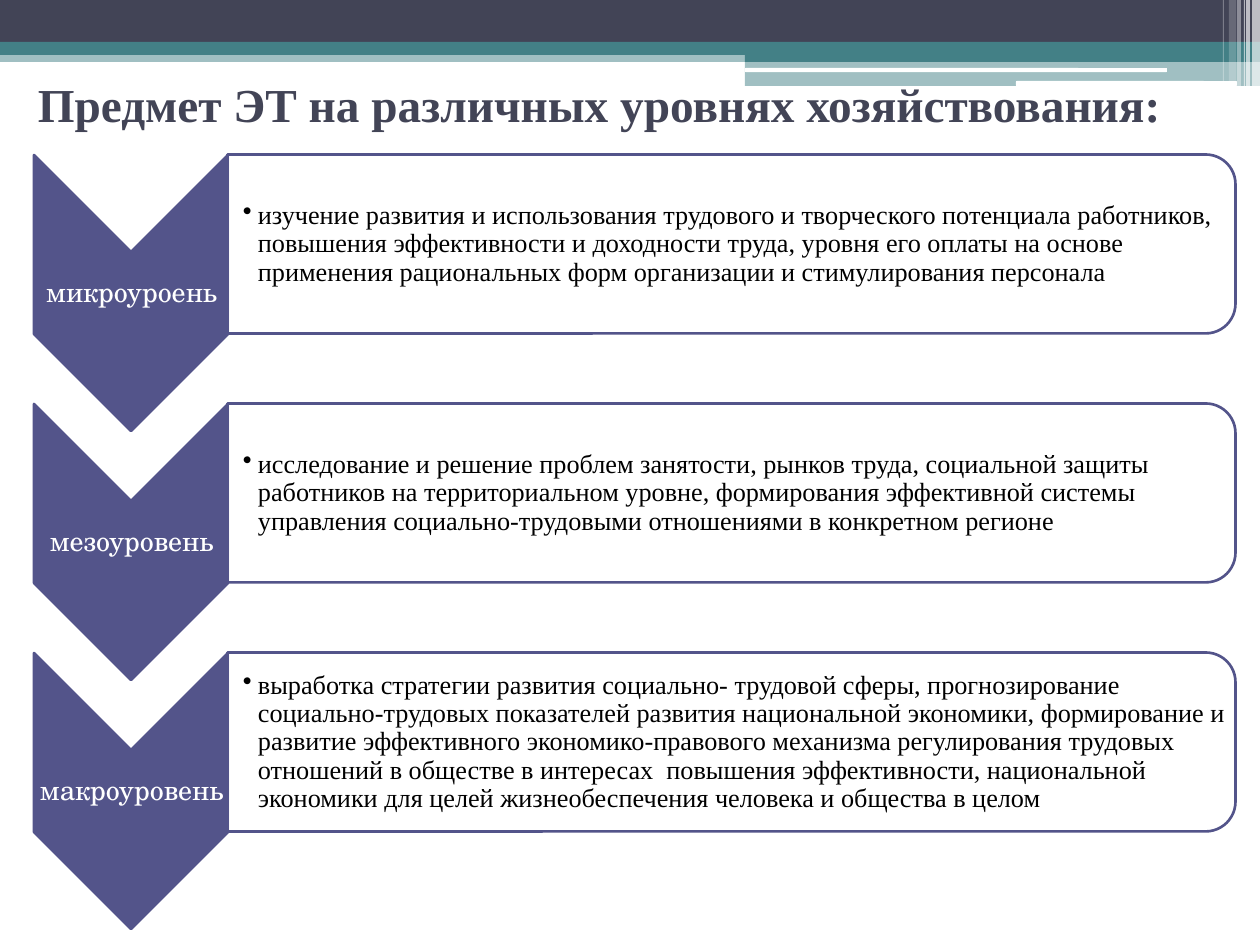
from lxml import etree
from pptx import Presentation
from pptx.dml.color import RGBColor
from pptx.enum.shapes import MSO_SHAPE
from pptx.enum.text import MSO_ANCHOR, PP_ALIGN
from pptx.oxml.ns import qn
from pptx.util import Pt

RECT = MSO_SHAPE.RECTANGLE
ROUNDED = MSO_SHAPE.ROUNDED_RECTANGLE
CHEVRON = MSO_SHAPE.CHEVRON
PANEL = MSO_SHAPE.ROUND_2_SAME_RECTANGLE
MIDDLE = MSO_ANCHOR.MIDDLE
LEFT = PP_ALIGN.LEFT
CENTER = PP_ALIGN.CENTER

EMU_PER_PX = 914400 / 126
COLORS = {
    "dark": "424456",
    "teal": "438086",
    "violet": "53548A",
    "white": "FFFFFF",
    "black": "000000",
}
SERIF = "Times New Roman"
SCHOOL = "TeX Gyre Schola"


def add_block(kind, bounds, color, opacity=100, outline=None, rotation=0):
    block = page.shapes.add_shape(kind, *[round(n * EMU_PER_PX) for n in bounds])
    block.shadow.inherit = False
    block.rotation = rotation
    block.fill.solid()
    block.fill.fore_color.rgb = RGBColor.from_string(COLORS[color])
    if opacity < 100:
        shade = block.fill._xPr.find(qn("a:solidFill"))[0]
        etree.SubElement(shade, qn("a:alpha"), val=str(opacity * 1000))
    if outline:
        block.line.color.rgb = RGBColor.from_string(COLORS[outline])
        block.line.width = Pt(1.5)
    else:
        block.line.fill.background()


def add_text(text, bounds, size, color, font=SERIF, bold=False, align=LEFT,
             insets=(1, 1, 1, 1), spacing=0.9, bullet_indent=0):
    box = page.shapes.add_textbox(*[round(n * EMU_PER_PX) for n in bounds])
    frame = box.text_frame
    frame.word_wrap = True
    frame.vertical_anchor = MIDDLE
    (frame.margin_left, frame.margin_top,
     frame.margin_right, frame.margin_bottom) = [round(n * EMU_PER_PX) for n in insets]
    para = frame.paragraphs[0]
    para.alignment = align
    para.line_spacing = spacing
    if bullet_indent:
        indent = round(bullet_indent * EMU_PER_PX)
        properties = para._p.get_or_add_pPr()
        properties.set("marL", str(indent))
        properties.set("indent", str(-indent))
        etree.SubElement(properties, qn("a:buChar"), char="•")
    span = para.add_run()
    span.text = text
    span.font.name = font
    span.font.size = Pt(size)
    span.font.bold = bold
    span.font.color.rgb = RGBColor.from_string(COLORS[color])


deck = Presentation()
deck.slide_width = round(1260 * EMU_PER_PX)
deck.slide_height = round(945 * EMU_PER_PX)
page = deck.slides.add_slide(deck.slide_layouts[6])

bands = [
    (RECT, (0, 50, 1260, 12), "teal", 50),
    (RECT, (0, 0, 1260, 42), "dark", 100),
    (RECT, (0, 42, 1260, 13), "teal", 100),
    (RECT, (745, 49, 515, 13), "teal", 100),
    (RECT, (745, 62, 515, 24), "teal", 50),
    (ROUNDED, (745, 68, 422, 4), "white", 100),
    (ROUNDED, (1016, 81, 221, 5), "white", 100),
]
for kind, bounds, color, opacity in bands:
    add_block(kind, bounds, color, opacity)

stripes = [
    (1252, 8, 86, 65),
    (1246, 4, 86, 65),
    (1244, 1, 86, 60),
    (1237, 4, 86, 40),
    (1229, 7, 81, 20),
    (1223, 1, 81, 30),
]
for left, width, height, opacity in stripes:
    add_block(RECT, (left, 0, width, height), "white", opacity)

add_text("Предмет ЭТ на различных уровнях хозяйствования:", (25, 55, 1197, 98),
         27, "dark", bold=True, insets=(13, 6, 13, 6), spacing=1.0)

levels = [
    ("микроуроень",
     "изучение развития и использования трудового и творческого потенциала работников, "
     "повышения эффективности и доходности труда, уровня его оплаты на основе применения "
     "рациональных форм организации и стимулирования персонала"),
    ("мезоуровень",
     "исследование и решение проблем занятости, рынков труда, социальной защиты работников "
     "на территориальном уровне, формирования эффективной системы управления "
     "социально-трудовыми отношениями в конкретном регионе"),
    ("макроуровень",
     "выработка стратегии развития социально- трудовой сферы, прогнозирование "
     "социально-трудовых показателей развития национальной экономики, формирование и "
     "развитие эффективного экономико-правового механизма регулирования трудовых отношений "
     "в обществе в интересах  повышения эффективности, национальной экономики для целей "
     "жизнеобеспечения человека и общества в целом"),
]
LEVEL_STEP = 249
for index, (name, subject) in enumerate(levels):
    shift = index * LEVEL_STEP
    add_block(CHEVRON, (-7, 196, 276, 194), "violet", outline="violet", rotation=90)
    page.shapes[-1].top += round(shift * EMU_PER_PX)
    add_text(name, (35, 252 + shift, 193, 83), 16, "white", font=SCHOOL, align=CENTER)
    add_block(PANEL, (642, shift - 260, 179, 1008), "white", 90, "violet", 90)
    add_text(subject, (228, 164 + shift, 999, 161), 15, "black",
             insets=(15, 1, 1, 1), bullet_indent=15)

deck.save("out.pptx")
